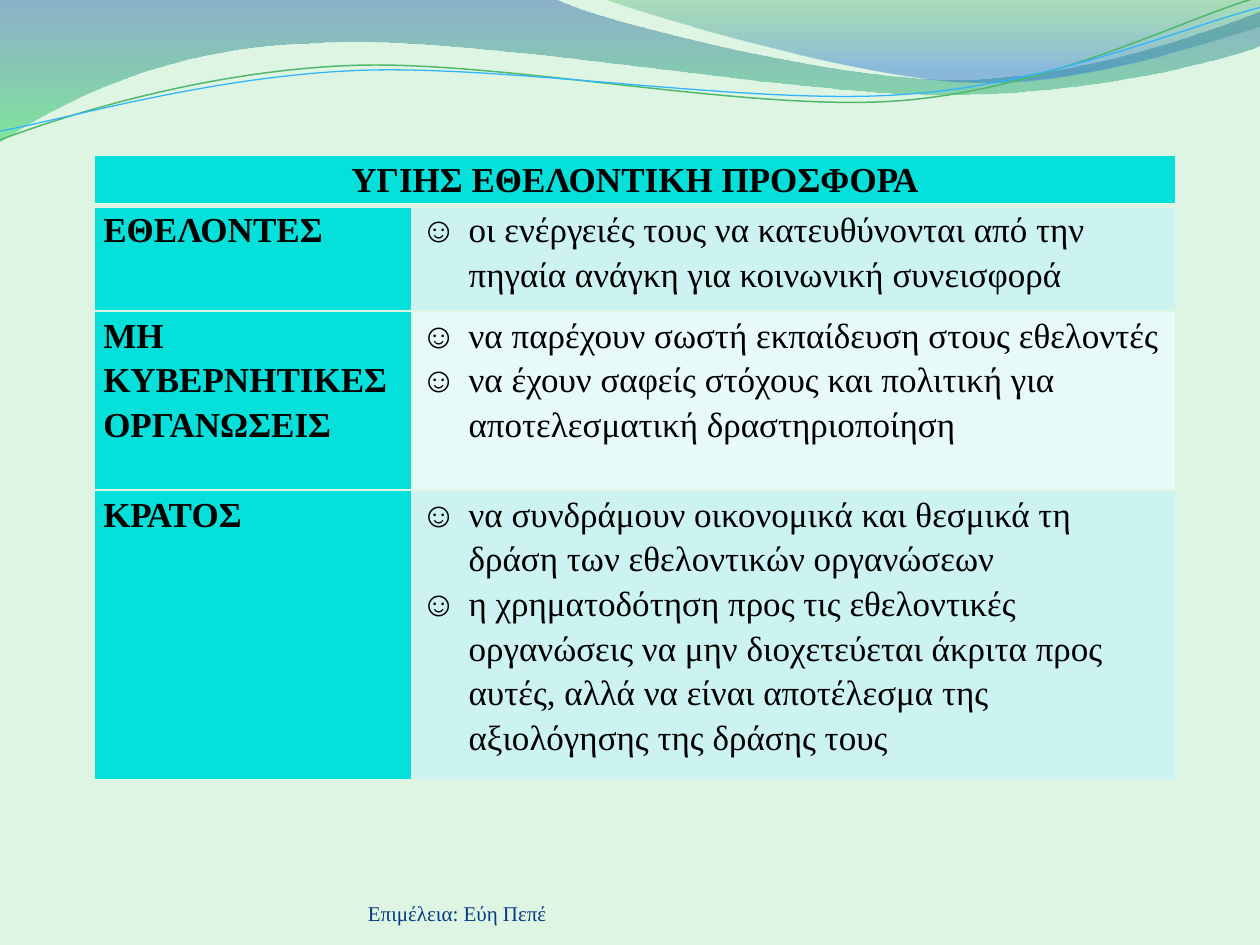
from math import cos, radians, sin

from lxml import etree
from pptx import Presentation
from pptx.dml.color import RGBColor
from pptx.enum.text import MSO_ANCHOR, PP_ALIGN
from pptx.oxml.ns import qn
from pptx.util import Inches, Pt

CENTER, LEFT = PP_ALIGN.CENTER, PP_ALIGN.LEFT
BOTTOM = MSO_ANCHOR.BOTTOM
FONT = "Times New Roman"
BACK, AQUA, PALE, LIGHT = "DEF5E4", "05E0DB", "CCF3F1", "E7F9F8"
BLACK, NAVY = "000000", "073B81"
UNIT = Inches(1)  # grid of 10 columns by 7.5 rows
TILT = -2.7

# Each outline: start point, then segments of 1 (line) or 3 (curve) points
BANDS = [
    ((0, 0),
     [[(4.4, -0.01)],
      [(4.76, 0.17), (6.64, 0.63), (7.58, 0.63)],
      [(8.53, 0.63), (9.58, 0.26), (10, 0.09)],
      [(10.01, 0.36)],
      [(9.83, 0.44), (8.7, 0.76), (7.46, 0.75)],
      [(6.22, 0.75), (3.82, 0.28), (2.57, 0.34)],
      [(1.29, 0.36), (0.46, 0.83), (-0.01, 1.13)]],
     [(0, "2960A7", 45), (100, "35DA5E", 55)]),
    ((4.79, -0.01),
     [[(5.09, 0.11), (6.82, 0.62), (7.69, 0.65)],
      [(8.56, 0.69), (9.61, 0.32), (10, 0.21)],
      [(10, 0)]],
     [(0, "36A752", 30), (80, "2472D3", 45)]),
]
# Each line also has its pivot, colour and width
LINES = [
    ((0, 1.11),
     [[(0.48, 0.93), (1.58, 0.57), (2.77, 0.52)],
      [(3.95, 0.47), (5.93, 0.89), (7.13, 0.8)],
      [(8.33, 0.71), (9.38, 0.15), (9.98, -0.02)]],
     (4.99, 0.58), "50B86A", 0.85),
    ((0, 1.04),
     [[(0.47, 0.96), (1.64, 0.61), (2.83, 0.56)],
      [(4.03, 0.51), (5.97, 0.84), (7.17, 0.75)],
      [(8.36, 0.67), (9.41, 0.21), (10, 0.06)]],
     (5, 0.59), "31B6FD", 0.75),
]
TITLE = "ΥΓΙΗΣ ΕΘΕΛΟΝΤΙΚΗ ΠΡΟΣΦΟΡΑ"
ROWS = [
    ("ΕΘΕΛΟΝΤΕΣ", PALE,
     ["οι ενέργειές τους να κατευθύνονται από την πηγαία ανάγκη για "
      "κοινωνική συνεισφορά"]),
    ("ΜΗ ΚΥΒΕΡΝΗΤΙΚΕΣ ΟΡΓΑΝΩΣΕΙΣ", LIGHT,
     ["να παρέχουν σωστή εκπαίδευση στους εθελοντές",
      "να έχουν σαφείς στόχους και πολιτική για αποτελεσματική "
      "δραστηριοποίηση"]),
    ("ΚΡΑΤΟΣ", PALE,
     ["να συνδράμουν οικονομικά και θεσμικά τη δράση των εθελοντικών "
      "οργανώσεων",
      "η χρηματοδότηση προς τις εθελοντικές οργανώσεις να μην διοχετεύεται "
      "άκριτα προς αυτές, αλλά να είναι αποτέλεσμα της αξιολόγησης της "
      "δράσης τους"]),
]


def paint(fill, color):
    fill.solid()
    fill.fore_color.rgb = RGBColor.from_string(color)


def grid(*parts):
    return [int(part * UNIT) for part in parts]


def write(para, text, size, color, bold=False):
    run = para.add_run()
    run.text = text
    font = run.font
    font.name, font.size, font.bold = FONT, Pt(size), bold
    font.color.rgb = RGBColor.from_string(color)


def turn(point, pivot, angle):
    x, y = point[0] - pivot[0], point[1] - pivot[1]
    c, s = cos(radians(angle)), sin(radians(angle))
    return pivot[0] + x * c - y * s, pivot[1] + x * s + y * c


def outline(slide, box, start, parts, close, pivot=(0, 0), angle=0):
    left, top = box
    points = [start] + [point for part in parts for point in part]
    flat = [turn(point, pivot, -angle) for point in points]
    spots = [grid(left + x, top + y) for x, y in flat]
    pen = slide.shapes.build_freeform(*spots[0])
    pen.add_line_segments(spots[1:], close=close)
    shape = pen.convert_to_shape()
    shape.rotation = angle
    shape.shadow.inherit = False
    # Join each three points into one curve
    legs = iter(list(shape.element.iter(qn("a:lnTo"))))
    for part in parts:
        group = [next(legs) for _ in part]
        if len(group) == 3:
            curve = etree.Element(qn("a:cubicBezTo"))
            group[0].addprevious(curve)
            for leg in group:
                curve.append(leg[0])
                leg.getparent().remove(leg)
    return shape


def waves(slide, box):
    # Shaded bands
    for start, parts, stops in BANDS:
        shape = outline(slide, box, start, parts, True)
        shape.line.fill.background()
        shape.fill.gradient()
        shape.fill.gradient_angle = 270
        for stop, (place, color, _) in zip(shape.fill.gradient_stops, stops):
            stop.position = place / 100
            stop.color.rgb = RGBColor.from_string(color)
        tones = shape.element.spPr.iter(qn("a:srgbClr"))
        for tone, (_, _, alpha) in zip(tones, stops):
            etree.SubElement(tone, qn("a:alpha"), val=str(alpha * 1000))
    # Thin curves
    for start, parts, pivot, color, width in LINES:
        shape = outline(slide, box, start, parts, False, pivot, TILT)
        shape.fill.background()
        paint(shape.line.fill, color)
        shape.line.width = Pt(width)


def border(cell, base):
    props = cell._tc.get_or_add_tcPr()
    widths = {"L": 1, "R": 1, "T": 1, "B": base}
    for spot, (side, width) in enumerate(widths.items()):
        line = etree.Element(qn("a:ln" + side), w=str(Pt(width)))
        solid = etree.SubElement(line, qn("a:solidFill"))
        etree.SubElement(solid, qn("a:srgbClr"), val=BACK)
        props.insert(spot, line)


def fill_cell(cell, texts, color, bold=True, align=LEFT, bullet=False, base=1):
    paint(cell.fill, color)
    border(cell, base)
    cell.margin_left = cell.margin_right = Inches(0.07)
    cell.margin_top = cell.margin_bottom = 0
    frame = cell.text_frame
    for spot, text in enumerate(texts):
        para = frame.add_paragraph() if spot else frame.paragraphs[0]
        para.alignment, para.line_spacing = align, 1.15
        if bullet:
            props = para._p.get_or_add_pPr()
            props.set("marL", str(Inches(0.38)))
            props.set("indent", str(-Inches(0.38)))
            etree.SubElement(props, qn("a:buFont"), typeface=FONT)
            etree.SubElement(props, qn("a:buChar"), char="☺")
        write(para, text, 20, BLACK, bold)


def roles(slide, box):
    table = slide.shapes.add_table(len(ROWS) + 1, 2, *grid(*box)).table
    table.first_row = table.horz_banding = False
    for col, width in zip(table.columns, grid(2.52, 6.06)):
        col.width = width
    for row, height in zip(table.rows, grid(0.4, 0.84, 1.42, 2.11)):
        row.height = height
    # Heading across both columns
    head = table.cell(0, 0)
    head.merge(table.cell(0, 1))
    fill_cell(head, [TITLE], AQUA, align=CENTER, base=3)
    fill_cell(table.cell(0, 1), [], AQUA, base=3)
    # One row for each role
    for row, (name, color, duties) in enumerate(ROWS, 1):
        fill_cell(table.cell(row, 0), [name], AQUA)
        fill_cell(table.cell(row, 1), duties, color, bold=False, bullet=True)


def footer(slide, box):
    frame = slide.shapes.add_textbox(*grid(*box)).text_frame
    frame.word_wrap = True
    frame.vertical_anchor = BOTTOM
    frame.margin_left = frame.margin_right = 0
    frame.margin_top = frame.margin_bottom = 0
    write(frame.paragraphs[0], "Επιμέλεια: Εύη Πεπέ", 12, NAVY)


def main():
    deck = Presentation()
    deck.slide_width, deck.slide_height = grid(10, 7.5)
    slide = deck.slides.add_slide(deck.slide_layouts[6])
    paint(slide.background.fill, BACK)
    waves(slide, (0, 0))
    footer(slide, (2.92, 6.95, 3.67, 0.4))
    roles(slide, (0.75, 1.23, 8.58, 4.77))
    deck.save("out.pptx")


if __name__ == "__main__":
    main()
